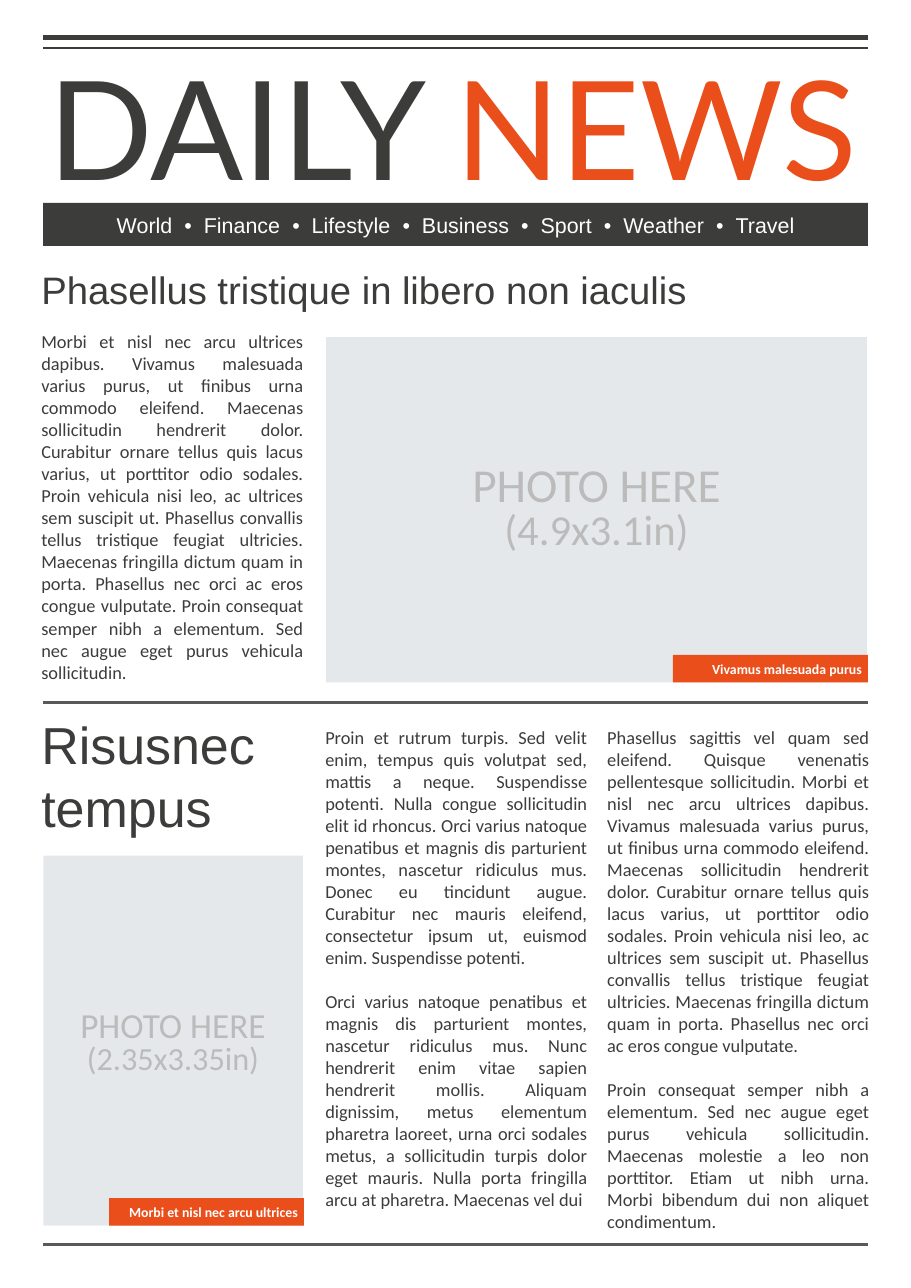
import pptx
import pptx.dml.color
import pptx.enum.shapes
import pptx.enum.text
import pptx.oxml.ns
import pptx.util
from lxml import etree

Pt = pptx.util.Pt
Align = pptx.enum.text.PP_ALIGN
Anchor = pptx.enum.text.MSO_ANCHOR
RGBColor = pptx.dml.color.RGBColor

INK = RGBColor(0x3C, 0x3C, 0x3B)
ORANGE = RGBColor(0xE9, 0x4E, 0x1B)
RULE = RGBColor(0x59, 0x59, 0x59)
PHOTO = RGBColor(0xE5, 0xE8, 0xEA)
PHOTO_TEXT = RGBColor(0xBB, 0xBB, 0xBB)
WHITE = RGBColor(0xFF, 0xFF, 0xFF)

LEFT, RIGHT = 28.3, 567.4
COLUMN_LEFTS, COLUMN_WIDTH = (27, 212.6, 396.9), 171.4
BODY_SIZE, BODY_GAP = 12, 14.4
CAPTION_WIDTH, CAPTION_HEIGHT = 127.4, 18

SECTIONS = ["World", "Finance", "Lifestyle", "Business", "Sport", "Weather", "Travel"]

LEAD_STORY = [
    "Morbi et nisl nec arcu ultrices dapibus. Vivamus malesuada varius purus, ut finibus urna "
    "commodo eleifend. Maecenas sollicitudin hendrerit dolor. Curabitur ornare tellus quis lacus "
    "varius, ut porttitor odio sodales. Proin vehicula nisi leo, ac ultrices sem suscipit ut. "
    "Phasellus convallis tellus tristique feugiat ultricies. Maecenas fringilla dictum quam in "
    "porta. Phasellus nec orci ac eros congue vulputate. Proin consequat semper nibh a elementum. "
    "Sed nec augue eget purus vehicula sollicitudin.",
]
MIDDLE_STORY = [
    "Proin et rutrum turpis. Sed velit enim, tempus quis volutpat sed, mattis a neque. Suspendisse "
    "potenti. Nulla congue sollicitudin elit id rhoncus. Orci varius natoque penatibus et magnis "
    "dis parturient montes, nascetur ridiculus mus. Donec eu tincidunt augue. Curabitur nec mauris "
    "eleifend, consectetur ipsum ut, euismod enim. Suspendisse potenti.",
    "Orci varius natoque penatibus et magnis dis parturient montes, nascetur ridiculus mus. Nunc "
    "hendrerit enim vitae sapien hendrerit mollis. Aliquam dignissim, metus elementum pharetra "
    "laoreet, urna orci sodales metus, a sollicitudin turpis dolor eget mauris. Nulla porta "
    "fringilla arcu at pharetra. Maecenas vel dui",
]
RIGHT_STORY = [
    "Phasellus sagittis vel quam sed eleifend. Quisque venenatis pellentesque sollicitudin. Morbi "
    "et nisl nec arcu ultrices dapibus. Vivamus malesuada varius purus, ut finibus urna commodo "
    "eleifend. Maecenas sollicitudin hendrerit dolor. Curabitur ornare tellus quis lacus varius, "
    "ut porttitor odio sodales. Proin vehicula nisi leo, ac ultrices sem suscipit ut. Phasellus "
    "convallis tellus tristique feugiat ultricies. Maecenas fringilla dictum quam in porta. "
    "Phasellus nec orci ac eros congue vulputate.",
    "Proin consequat semper nibh a elementum. Sed nec augue eget purus vehicula sollicitudin. "
    "Maecenas molestie a leo non porttitor. Etiam ut nibh urna. Morbi bibendum dui non aliquet "
    "condimentum.",
]


class Newspaper:
    heading_font = "Arial"
    body_font = "Calibri"
    masthead_font = "Lato"

    def __init__(self, page):
        self.page = page

    def frame(self, box, anchor=Anchor.TOP, margin_top=0, margin_right=0):
        """Prepare the text frame of a box and return it."""
        frame = box.text_frame
        frame.word_wrap = True
        frame.auto_size = pptx.enum.text.MSO_AUTO_SIZE.NONE
        frame.vertical_anchor = anchor
        frame.margin_left = frame.margin_bottom = 0
        frame.margin_top = Pt(margin_top)
        frame.margin_right = Pt(margin_right)
        return frame

    def span(self, para, text, font, size, color, bold=False):
        span = para.add_run()
        span.text = text
        span.font.name = font
        span.font.size = Pt(size)
        span.font.color.rgb = color
        span.font.bold = bold
        return span

    def rule(self, top, width, color):
        line = self.page.shapes.add_connector(
            pptx.enum.shapes.MSO_CONNECTOR.STRAIGHT, Pt(LEFT), Pt(top), Pt(RIGHT), Pt(top))
        line.line.color.rgb = color
        line.line.width = Pt(width)
        etree.SubElement(line._element.spPr, pptx.oxml.ns.qn("a:effectLst"))

    def block(self, left, top, width, height, color):
        block = self.page.shapes.add_shape(
            pptx.enum.shapes.MSO_SHAPE.RECTANGLE, Pt(left), Pt(top), Pt(width), Pt(height))
        block.shadow.inherit = False
        block.fill.solid()
        block.fill.fore_color.rgb = color
        block.line.fill.background()
        return block

    def text_box(self, left, top, width, height):
        box = self.page.shapes.add_textbox(Pt(left), Pt(top), Pt(width), Pt(height))
        return self.frame(box)

    def masthead(self, left, top, width, height):
        title = self.page.shapes.title
        title.left, title.top, title.width, title.height = map(Pt, (left, top, width, height))
        para = self.frame(title).paragraphs[0]
        para.alignment = Align.CENTER
        self.span(para, "DAILY ", self.masthead_font, 90, INK)
        self.span(para, "NEWS", self.masthead_font, 90, ORANGE)

    def section_bar(self, top, height, sections):
        """Draw the bar of section names, with widened spaces around the dots."""
        bar = self.block(LEFT, top, RIGHT - LEFT, height, INK)
        para = self.frame(bar, Anchor.MIDDLE, margin_top=1).paragraphs[0]
        para.alignment = Align.CENTER
        for number, section in enumerate(sections):
            for text in (" ", "•", " ") if number else ():
                span = self.span(para, text, self.heading_font, 14, WHITE)
                if text == " ":
                    span.font._element.set("spc", "390")
            self.span(para, section, self.heading_font, 14, WHITE)

    def headline(self, top, width, height, text, size):
        para = self.text_box(COLUMN_LEFTS[0], top, width, height).paragraphs[0]
        self.span(para, text, self.heading_font, size, INK)

    def story(self, column, top, height, paragraphs):
        frame = self.text_box(COLUMN_LEFTS[column], top, COLUMN_WIDTH, height)
        for number, text in enumerate(paragraphs):
            para = frame.add_paragraph() if number else frame.paragraphs[0]
            para.alignment = Align.JUSTIFY
            if number:
                para.space_before = Pt(BODY_GAP)
            self.span(para, text, self.body_font, BODY_SIZE, INK)

    def photo(self, left, top, width, height, lines, pitch, drop, caption):
        """Draw a photo area with its label lines and a caption in the lower right corner."""
        area = self.block(left, top, width, height, PHOTO)
        frame = self.frame(area, Anchor.MIDDLE, margin_top=drop)
        for number, (text, size) in enumerate(lines):
            para = frame.add_paragraph() if number else frame.paragraphs[0]
            para.alignment = Align.CENTER
            para.line_spacing = Pt(pitch)
            self.span(para, text, self.body_font, size, PHOTO_TEXT)

        tag = self.block(left + width - CAPTION_WIDTH + 0.7, top + height - CAPTION_HEIGHT,
                         CAPTION_WIDTH, CAPTION_HEIGHT, ORANGE)
        para = self.frame(tag, Anchor.MIDDLE, margin_right=4).paragraphs[0]
        para.alignment = Align.RIGHT
        self.span(para, caption, self.body_font, 9, WHITE, bold=True)


def main():
    deck = pptx.Presentation()
    deck.slide_width, deck.slide_height = Pt(595.44), Pt(841.68)
    paper = Newspaper(deck.slides.add_slide(deck.slide_layouts[5]))

    paper.rule(24.5, 3, INK)
    paper.rule(31.2, 1.5, INK)
    paper.masthead(5.4, 28.1, 581, 109.4)
    paper.section_bar(132.6, 28.1, SECTIONS)

    paper.headline(173.8, 543, 30.2, "Phasellus tristique in libero non iaculis", 25)
    paper.story(0, 215.8, 232.6, LEAD_STORY)
    paper.photo(213.1, 220.3, 353.5, 225.6,
                [("PHOTO HERE", 30.9), ("(4.9x3.1in)", 27.9)], 27.6, 2.2,
                "Vivamus malesuada purus")
    paper.rule(459, 1.5, RULE)

    paper.headline(465.8, COLUMN_WIDTH, 82, "Risusnec tempus", 34)
    paper.story(1, 474.2, 334.8, MIDDLE_STORY)
    paper.story(2, 474.2, 334.8, RIGHT_STORY)
    paper.photo(LEFT, 559.1, 169.7, 241.9,
                [("PHOTO HERE", 23), ("(2.35x3.35in)", 21.1)], 21, 5.8,
                "Morbi et nisl nec arcu ultrices")
    paper.rule(813.3, 2.25, RULE)

    deck.save("out.pptx")


if __name__ == "__main__":
    main()
